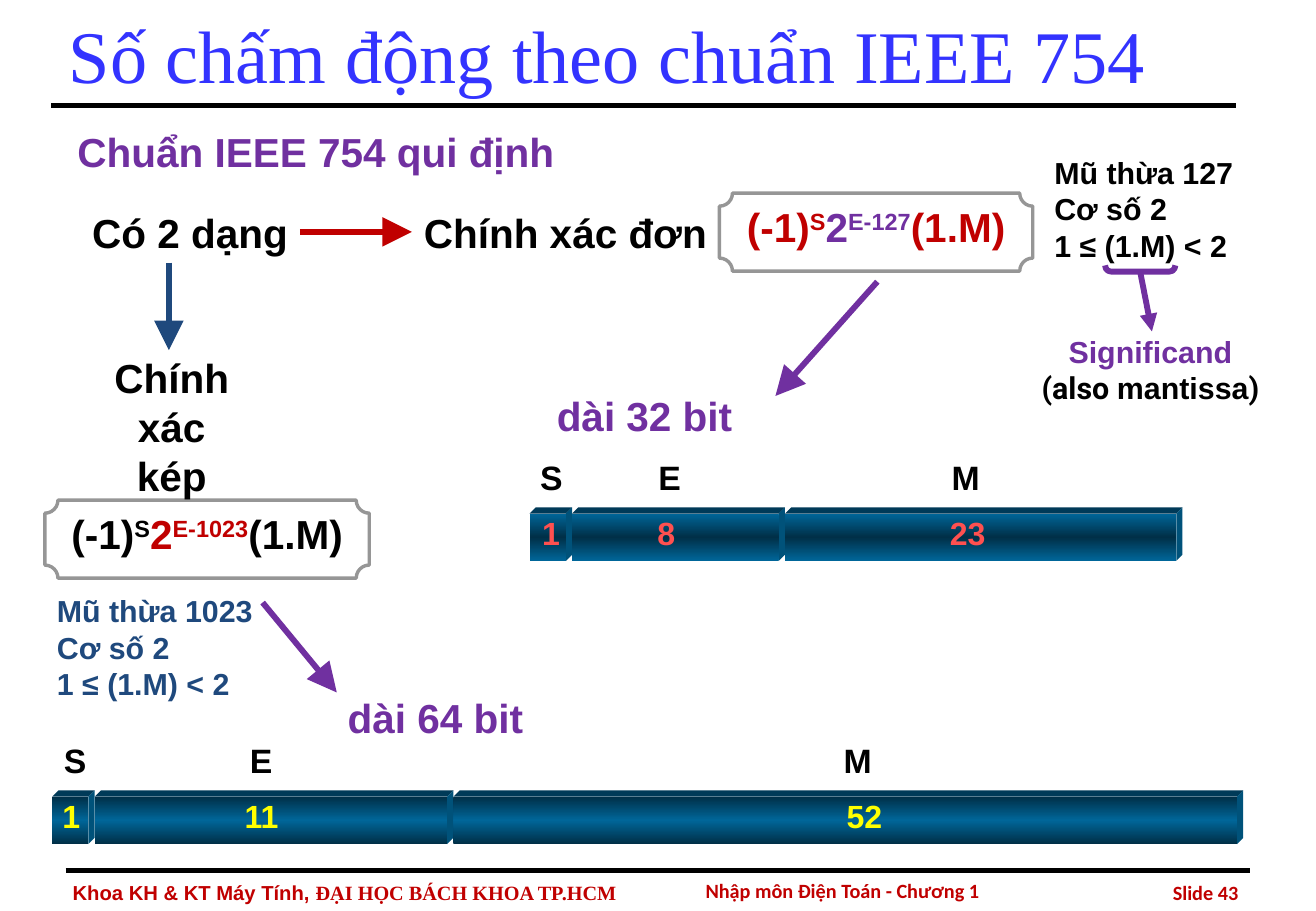
import copy
from dataclasses import dataclass

import lxml.etree
import pptx
import pptx.dml.color
import pptx.enum.shapes
import pptx.enum.text
import pptx.oxml.ns
import pptx.util

Cm = pptx.util.Cm
Pt = pptx.util.Pt
qn = pptx.oxml.ns.qn
Align = pptx.enum.text.PP_ALIGN
Anchor = pptx.enum.text.MSO_ANCHOR
Preset = pptx.enum.shapes.MSO_SHAPE


@dataclass(frozen=True)
class Theme:
    title: str = "3333FF"
    ink: str = "000000"
    red: str = "C00000"
    purple: str = "7030A0"
    navy: str = "1F497D"
    frame: str = "969696"
    deep: str = "002F47"
    bright: str = "006699"
    top_face: str = "003A58"
    side_face: str = "00527A"
    coral: str = "FF5050"
    yellow: str = "FFFF00"
    sans: str = "Arial"
    serif: str = "Times New Roman"
    footer_font: str = "Calibri"
    also_font: str = "Roboto"
    title_size: int = 44
    heading_size: int = 24
    label_size: int = 20
    value_size: int = 19
    note_size: int = 18
    footer_size: int = 12


THEME = Theme()


@dataclass(frozen=True)
class Span:
    text: str
    color: str = ""
    font: str = ""
    raised: bool = False


@dataclass(frozen=True)
class Text:
    place: tuple[float, float, float, float]
    lines: list[list[Span]]
    size: int = THEME.heading_size
    color: str = THEME.ink
    align: Align = Align.CENTER
    font: str = THEME.sans
    inset: float = 0.25
    anchor: Anchor = Anchor.TOP


@dataclass(frozen=True)
class Line:
    start: tuple[float, float]
    end: tuple[float, float]
    color: str
    width: float = 3.5
    head: str = "lg"


@dataclass(frozen=True)
class Field:
    label: str
    bits: str
    width: float
    label_center: float
    bits_center: float


@dataclass(frozen=True)
class Register:
    left: float
    top: float
    edge: str
    middle: str
    bits_color: str
    fields: list[Field]


BAR_HEIGHT = 0.99
BAR_DEPTH = 0.13


def rgb(color: str) -> pptx.dml.color.RGBColor:
    return pptx.dml.color.RGBColor.from_string(color)


def lines(*texts: str) -> list[list[Span]]:
    return [[Span(text)] for text in texts]


def write(shape, text: Text) -> None:
    frame = shape.text_frame
    frame.word_wrap = True
    frame.auto_size = pptx.enum.text.MSO_AUTO_SIZE.NONE
    frame.vertical_anchor = text.anchor
    frame.margin_left = frame.margin_right = Cm(text.inset)
    frame.margin_top = frame.margin_bottom = Cm(text.inset)
    for number, spans in enumerate(text.lines):
        para = frame.add_paragraph() if number else frame.paragraphs[0]
        para.alignment = text.align
        para.font.size = Pt(text.size)
        para.font.bold = text.size != THEME.title_size
        para.font.name = text.font
        para.font.color.rgb = rgb(text.color)
        for span in spans:
            run = para.add_run()
            run.text = span.text
            if span.color:
                run.font.color.rgb = rgb(span.color)
            if span.font:
                run.font.name = span.font
            if span.raised:
                run._r.get_or_add_rPr().set("baseline", "30000")


def add_text(slide, text: Text) -> None:
    write(slide.shapes.add_textbox(*map(Cm, text.place)), text)


def add_outline(slide, preset: Preset, place: tuple[float, ...], adjust: float, color: str, width: float):
    shape = slide.shapes.add_shape(preset, *map(Cm, place))
    shape.shadow.inherit = False
    shape.adjustments[0] = adjust
    shape.fill.background()
    shape.line.color.rgb = rgb(color)
    shape.line.width = Pt(width)
    return shape


def add_line(slide, line: Line) -> None:
    connector = slide.shapes.add_connector(
        pptx.enum.shapes.MSO_CONNECTOR.STRAIGHT, *map(Cm, line.start + line.end))
    connector.line.color.rgb = rgb(line.color)
    connector.line.width = Pt(line.width)
    if line.head:
        lxml.etree.SubElement(connector.line._get_or_add_ln(), qn("a:tailEnd"),
                              type="triangle", w=line.head, len=line.head)
    lxml.etree.SubElement(connector._element.spPr, qn("a:effectLst"))


def add_face(slide, points: list[tuple[float, float]], color: str) -> None:
    corners = [(Cm(x), Cm(y)) for x, y in points]
    builder = slide.shapes.build_freeform(*corners[0])
    builder.add_line_segments(corners[1:], close=True)
    face = builder.convert_to_shape()
    face.shadow.inherit = False
    face.fill.solid()
    face.fill.fore_color.rgb = rgb(color)
    face.line.fill.background()


def add_bar(slide, left: float, top: float, width: float, edge: str, middle: str) -> None:
    right, bottom, depth = left + width, top + BAR_HEIGHT, BAR_DEPTH
    add_face(slide, [(left, top), (left + depth, top - depth),
                     (right + depth, top - depth), (right, top)], THEME.top_face)
    add_face(slide, [(right, top), (right + depth, top - depth),
                     (right + depth, bottom - depth), (right, bottom)], THEME.side_face)
    bar = slide.shapes.add_shape(Preset.RECTANGLE, *map(Cm, (left, top, width, BAR_HEIGHT)))
    bar.shadow.inherit = False
    bar.line.fill.background()
    bar.fill.gradient()
    bar.fill.gradient_angle = 90
    first, second = bar.fill.gradient_stops
    first.color.rgb, second.color.rgb = rgb(edge), rgb(middle)
    first.position, second.position = 0, 0.5
    stops = bar._element.spPr.find(".//" + qn("a:gsLst"))
    last = copy.deepcopy(stops[0])
    last.set("pos", "100000")
    stops.append(last)


def add_register(slide, register: Register) -> None:
    left, top = register.left, register.top
    for field in register.fields:
        add_bar(slide, left, top, field.width, register.edge, register.middle)
        add_text(slide, Text((field.bits_center - 0.57, top, 1.14, 0.84), lines(field.bits),
                             THEME.value_size, register.bits_color, inset=0))
        add_text(slide, Text((field.label_center - 0.36, top - 1.19, 0.72, 0.86), lines(field.label),
                             THEME.label_size, inset=0))
        left += field.width + BAR_DEPTH


def formula(place: tuple[float, float, float, float], exponent: str, outer: str, inner: str) -> Text:
    spans = [Span("(-1)"), Span("S", raised=True), Span("2", inner),
             Span(exponent, inner, raised=True), Span("(1.M)")]
    return Text(place, [spans], color=outer, inset=0)


TITLE = Text((1.19, 0, 24.77, 2.24), lines("Số chấm động theo chuẩn IEEE 754"), THEME.title_size,
             THEME.title, Align.LEFT, THEME.serif, anchor=Anchor.MIDDLE)
TEXTS = [
    Text((1.27, 18.29, 14.15, 0.76),
         [[Span("Khoa KH & KT Máy Tính, "), Span("ĐẠI HỌC BÁCH KHOA TP.HCM", font=THEME.serif)]],
         THEME.footer_size, THEME.red, Align.LEFT, anchor=Anchor.MIDDLE),
    Text((13.26, 18.19, 8.71, 0.87), lines("Nhập môn Điện Toán - Chương 1"), THEME.footer_size,
         THEME.red, font=THEME.footer_font, anchor=Anchor.MIDDLE),
    Text((22.58, 18.26, 3.56, 0.79), lines("Slide 43"), THEME.footer_size, THEME.red,
         Align.RIGHT, THEME.footer_font, anchor=Anchor.MIDDLE),
    Text((1.37, 2.41, 10.59, 1.55), lines("Chuẩn IEEE 754 qui định"), color=THEME.purple, align=Align.LEFT),
    Text((1.65, 4.09, 4.65, 1.55), lines("Có 2 dạng")),
    Text((8.53, 4.09, 6.58, 1.55), lines("Chính xác đơn")),
    Text((2.13, 7.14, 2.92, 3.4), lines("Chính xác kép")),
    Text((6.78, 14.25, 4.65, 1.47), lines("dài 64 bit"), color=THEME.purple),
    Text((11.15, 7.92, 4.65, 1.47), lines("dài 32 bit"), color=THEME.purple),
    Text((0.94, 12.14, 5.16, 2.77), lines("Mũ thừa 1023", "Cơ số 2", "1 ≤ (1.M) < 2"),
         THEME.note_size, THEME.navy, Align.LEFT),
    Text((21.79, 2.97, 4.45, 2.82), lines("Mũ thừa 127", "Cơ số 2", "1 ≤ (1.M) < 2"),
         THEME.note_size, align=Align.LEFT),
    Text((21.13, 6.71, 5.84, 1.17),
         [[Span("Significand", THEME.purple)],
          [Span("(also ", font=THEME.also_font), Span("mantissa"), Span(")", font=THEME.also_font)]],
         THEME.note_size),
]
FORMULAS = [
    formula((15.04, 4.04, 6.55, 1.63), "E-127", THEME.red, THEME.purple),
    formula((0.94, 10.46, 6.78, 1.63), "E-1023", THEME.ink, THEME.red),
]
LINES = [
    Line((1.37, 18.21), (26.14, 18.21), THEME.ink, 3, ""),
    Line((1.07, 2.21), (25.83, 2.21), THEME.ink, 3, ""),
    Line((6.27, 4.85), (8.61, 4.85), THEME.red),
    Line((3.53, 5.49), (3.53, 7.32), THEME.navy),
    Line((5.49, 12.6), (7.04, 14.48), THEME.purple),
    Line((18.34, 5.89), (16.21, 8.28), THEME.purple),
    Line((23.83, 5.66), (24.08, 6.93), THEME.purple, head="med"),
]
REGISTERS = [
    Register(11.07, 10.74, THEME.bright, THEME.deep, THEME.coral,
             [Field("S", "1", 0.76, 11.53, 11.52), Field("E", "8", 4.32, 14, 13.93),
              Field("M", "23", 8.18, 20.19, 20.23)]),
    Register(1.09, 16.66, THEME.deep, THEME.bright, THEME.yellow,
             [Field("S", "1", 0.76, 1.57, 1.49), Field("E", "11", 7.37, 5.46, 5.47),
              Field("M", "52", 16.38, 17.93, 18.07)]),
]


def main() -> None:
    deck = pptx.Presentation()
    deck.slide_width, deck.slide_height = Cm(27.51), Cm(19.05)
    page = deck.slides.add_slide(deck.slide_layouts.get_by_name("Title Only"))
    title = page.shapes.title
    title.left, title.top, title.width, title.height = map(Cm, TITLE.place)
    write(title, TITLE)
    for line in LINES:
        add_line(page, line)
    for register in REGISTERS:
        add_register(page, register)
    for text in FORMULAS:
        write(add_outline(page, Preset.PLAQUE, text.place, 0.167, THEME.frame, 2), text)
    for text in TEXTS:
        add_text(page, text)
    bracket = add_outline(page, Preset.RIGHT_BRACKET, (23.77, 4.88, 0.13, 1.47), 0.957, THEME.purple, 3.5)
    bracket.rotation = 90
    deck.save("out.pptx")


if __name__ == "__main__":
    main()
